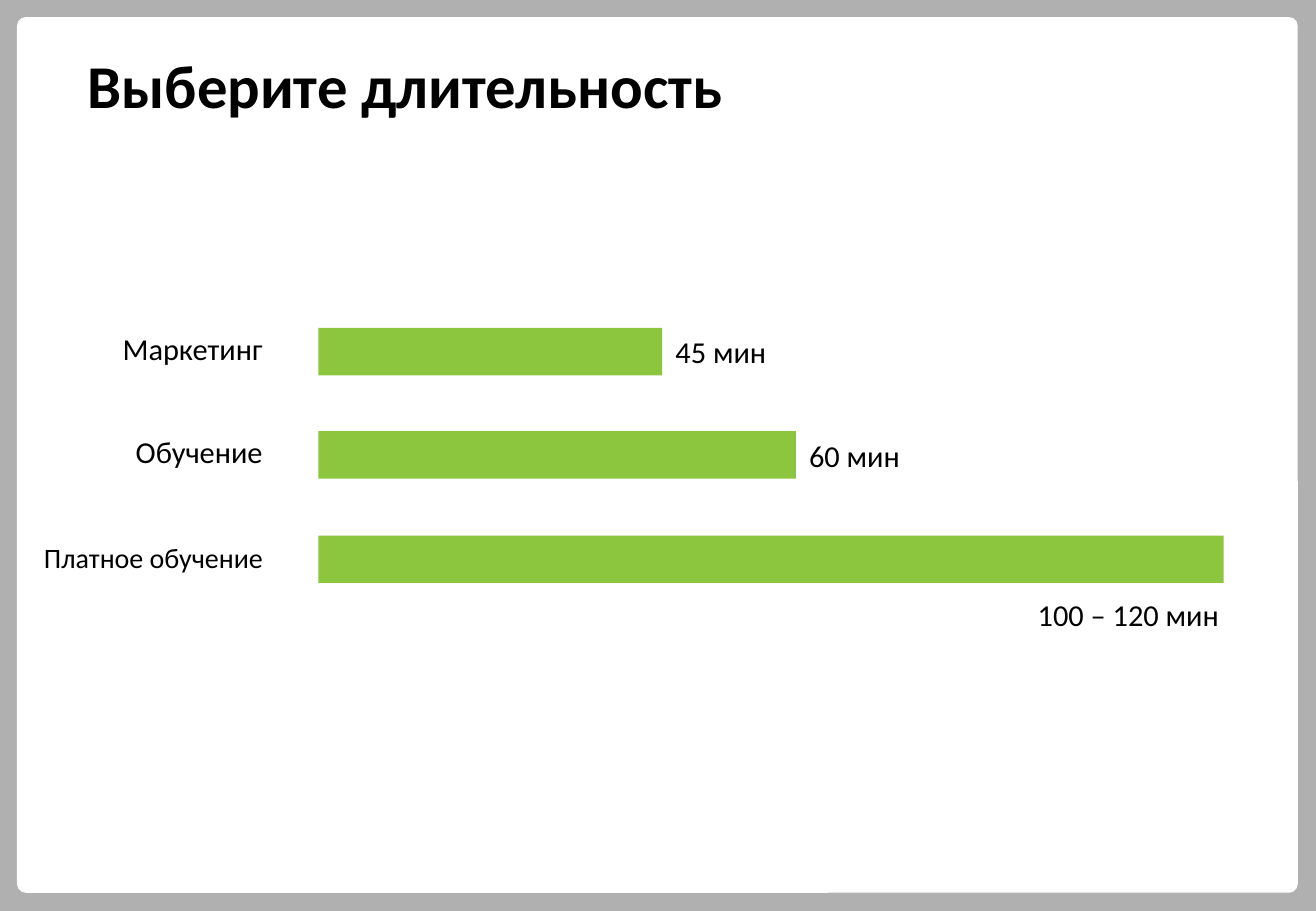
from pptx import Presentation
from pptx import util as u
from pptx.dml.color import RGBColor
from pptx.enum import shapes, text

PX = 9144  # EMU per px, 100 px to the inch
FONT = "Calibri"
COLORS = {"frame": "B0B0B0", "panel": "FFFFFF", "bar": "8CC63F", "text": "000000"}

BAR_LEFT, BAR_TOP, BAR_HEIGHT = 262, 270, 39
LABEL_RIGHT = 226
LEFT, RIGHT = text.PP_ALIGN.LEFT, text.PP_ALIGN.RIGHT

# label, (left, top, size), bar width, value, (left, top, width, alignment)
DURATIONS = [
    ("Маркетинг", (81, 267, 18), 283, "45 мин", (546, 269, 145, LEFT)),
    ("Обучение", (81, 352, 18), 393, "60 мин", (656, 355, 145, LEFT)),
    ("Платное обучение", (15, 440, 16.6), 745, "100 – 120 мин", (819, 486, 194, RIGHT)),
]


def color(name):
    return RGBColor.from_string(COLORS[name])


def place(shape, left, top, width, height):
    shape.left, shape.top = left * PX, top * PX
    shape.width, shape.height = width * PX, height * PX


def style_text(frame, size, align=LEFT, bold=False):
    frame.word_wrap = True
    frame.vertical_anchor = text.MSO_ANCHOR.TOP
    para = frame.paragraphs[0]
    para.alignment = align
    for span in para.runs:
        span.font.name = FONT
        span.font.size = u.Pt(size)
        span.font.bold = bold
        span.font.color.rgb = color("text")


def add_block(page, kind, fill, left, top, width, height):
    """Add a filled shape without outline or shadow."""
    block = page.shapes.add_shape(kind, left * PX, top * PX, width * PX, height * PX)
    block.fill.solid()
    block.fill.fore_color.rgb = color(fill)
    block.line.fill.background()
    block.shadow.inherit = False
    return block


def add_caption(page, words, left, top, width, size, align):
    box = page.shapes.add_textbox(left * PX, top * PX, width * PX, BAR_HEIGHT * PX)
    box.text_frame.text = words
    style_text(box.text_frame, size, align)


def add_panel(page):
    """Add the white rounded panel behind the title."""
    panel = add_block(page, shapes.MSO_SHAPE.ROUNDED_RECTANGLE, "panel", 14, 14, 1054, 721)
    panel.adjustments[0] = 0.01
    page.shapes.title.element.addprevious(panel.element)


def set_title(page, words):
    title = page.shapes.title
    place(title, 62, 51, 991, 120)
    title.text_frame.text = words
    style_text(title.text_frame, 36, bold=True)
    title.text_frame.paragraphs[0].line_spacing = 0.7


def add_durations(page):
    for row, (label, label_spot, bar_width, value, value_spot) in enumerate(DURATIONS):
        left, top, size = label_spot
        add_caption(page, label, left, top, LABEL_RIGHT - left, size, RIGHT)
        bar_top = BAR_TOP + row * 171 // 2
        add_block(page, shapes.MSO_SHAPE.RECTANGLE, "bar",
                  BAR_LEFT, bar_top, bar_width, BAR_HEIGHT)
        left, top, width, align = value_spot
        add_caption(page, value, left, top, width, 18, align)


def main():
    deck = Presentation()
    deck.slide_width, deck.slide_height = 1083 * PX, 750 * PX
    page = deck.slides.add_slide(deck.slide_layouts.get_by_name("Title Only"))
    page.background.fill.solid()
    page.background.fill.fore_color.rgb = color("frame")
    add_panel(page)
    set_title(page, "Выберите длительность")
    add_durations(page)
    deck.save("out.pptx")


if __name__ == "__main__":
    main()
